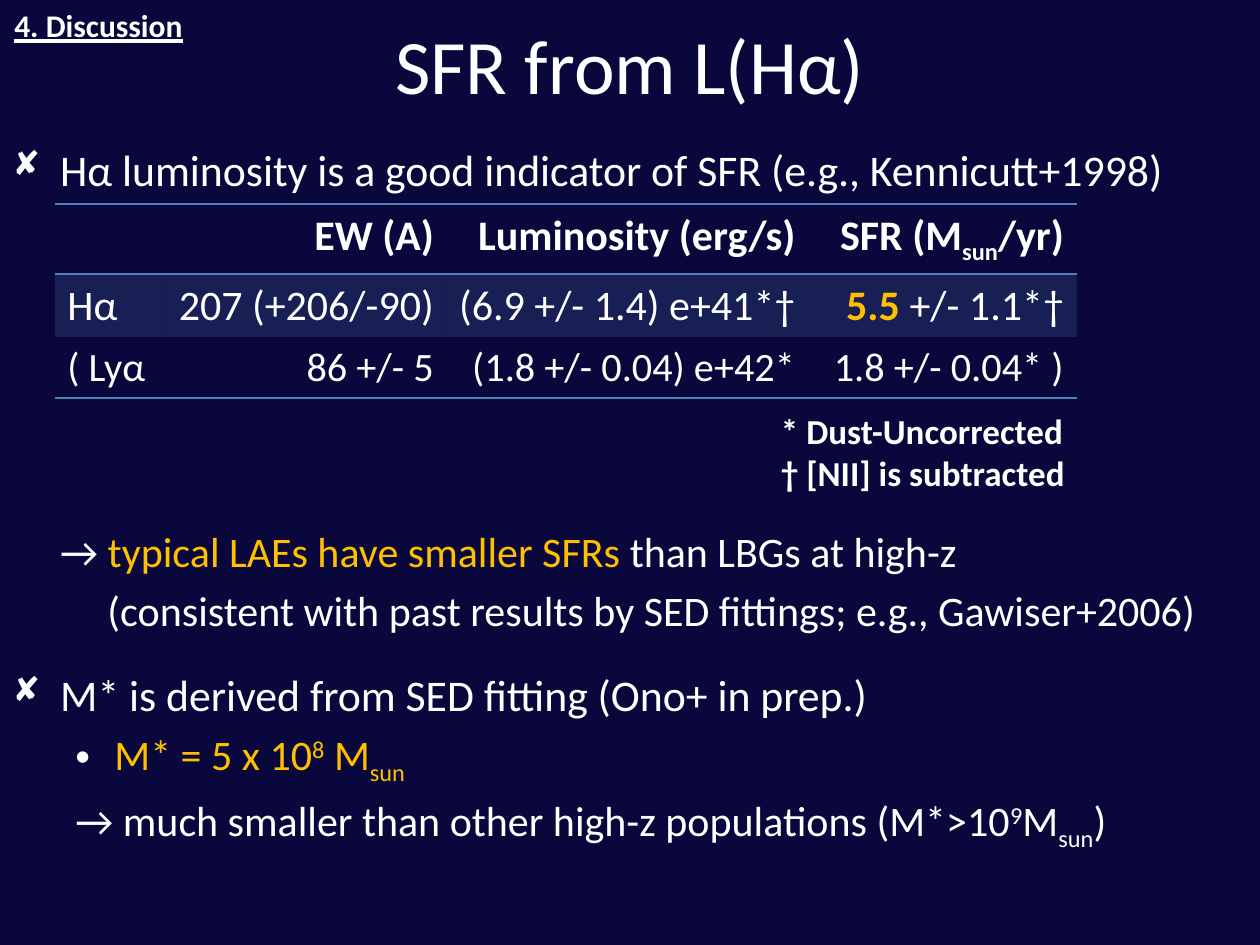
"""Build the slide on star formation rates from H-alpha luminosity."""
from lxml.etree import SubElement
from pptx import Presentation
from pptx.dml.color import RGBColor as Rgb
from pptx.enum.text import MSO_ANCHOR as Anchor, MSO_AUTO_SIZE as Fit, PP_ALIGN as Align
from pptx.oxml.ns import qn
from pptx.util import Inches, Pt

THEME = dict(
    font="Calibri", ground="09073B", ink="FFFFFF", accent="FFC000", rule="4F81BD",
    title=44, lead=25, text=24, last_row=23, note=20, section=18,
)
BULLET_FONTS = {"◻": "Wingdings", "•": "Arial"}
BOLD = dict(bold=True)
GOLD = dict(color=THEME["accent"])
SUB, SUP = dict(baseline=-25000), dict(baseline=30000)


def write(paragraph, runs, size, **common):
    for words, style in runs:
        look = {**common, **style}
        run = paragraph.add_run()
        run.text = words
        run.font.color.rgb = Rgb.from_string(look.pop("color", THEME["ink"]))
        baseline = look.pop("baseline", 0)
        for key, value in dict(name=THEME["font"], size=Pt(size), **look).items():
            setattr(run.font, key, value)
        if baseline:
            run.font._element.set("baseline", str(baseline))


def add_text(slide, place, lines, size, frame_format, align=Align.LEFT, **common):
    frame = slide.shapes.add_textbox(*place).text_frame
    for key, value in frame_format.items():
        setattr(frame, key, value)
    for number, words in enumerate(lines):
        paragraph = frame.add_paragraph() if number else frame.paragraphs[0]
        paragraph.alignment = align
        write(paragraph, [(words, {})] if words else [], size, **common)
    return frame


deck = Presentation()
deck.slide_width, deck.slide_height = Inches(10), Inches(7.5)
col, row = deck.slide_width / 100, deck.slide_height / 75
slide = deck.slides.add_slide(deck.slide_layouts[6])
slide.background.fill.solid()
slide.background.fill.fore_color.rgb = Rgb.from_string(THEME["ground"])

body_lines = [
    ("◻", 3.8, -3.8, 0, "lead",
     [("Hα luminosity is a good indicator of SFR (e.g., Kennicutt+1998)", {})]),
    (None, 3.8, 0, 189, "text",
     [("→ ", {}), ("typical LAEs have smaller SFRs ", GOLD), ("than LBGs at high-z", {})]),
    (None, 7.55, 0, 5, "text",
     [("(consistent with past results by SED fittings; e.g., Gawiser+2006)", {})]),
    ("◻", 3.8, -3.8, 18.5, "lead",
     [("M* is derived from SED fitting (Ono+ in prep.)", {})]),
    ("•", 8.1, -3.1, 5, "text",
     [("M* = 5 x 10", GOLD), ("8", GOLD | SUP), (" M", GOLD), ("sun", GOLD | SUB)]),
    (None, 5, 0, 5, "text",
     [("→ much smaller than other high-z populations (M*>10", {}), ("9", SUP),
      ("M", {}), ("sun", SUB), (")", {})]),
]
body = add_text(slide, (0, int(10.8 * row), int(100 * col), int(64.2 * row)),
                [""] * len(body_lines), THEME["text"], dict(word_wrap=True))
for paragraph, (bullet, margin, indent, gap, size, runs) in zip(body.paragraphs, body_lines):
    paragraph.space_before = Pt(gap)
    properties = paragraph._p.get_or_add_pPr()
    properties.set("marL", str(int(margin * col)))
    properties.set("indent", str(int(indent * col)))
    if bullet:
        bullet_color = SubElement(properties, qn("a:buClr"))
        SubElement(bullet_color, qn("a:srgbClr"), val=THEME["ink"])
        SubElement(properties, qn("a:buFont"), typeface=BULLET_FONTS[bullet])
        SubElement(properties, qn("a:buChar"), char=bullet)
    else:
        SubElement(properties, qn("a:buNone"))
    write(paragraph, runs, THEME[size])

add_text(slide, (int(5 * col), 0, int(90 * col), int(10.1 * row)), ["SFR from L(Hα)"],
         THEME["title"], dict(word_wrap=True, vertical_anchor=Anchor.MIDDLE), Align.CENTER)
label_format = dict(word_wrap=False, auto_size=Fit.SHAPE_TO_FIT_TEXT)
add_text(slide, (int(0.15 * col), 0, int(15.5 * col), int(4 * row)), ["4. Discussion"],
         THEME["section"], label_format, bold=True, underline=True)

results = [
    [[], [("EW (A)", BOLD)], [("Luminosity (erg/s)", BOLD)],
     [("SFR (M", BOLD), ("sun", BOLD | SUB), ("/yr)", BOLD)]],
    [[("Hα", {})], [("207 (+206/-90)", {})], [("(6.9 +/- 1.4) e+41*†", {})],
     [("5.5", GOLD | BOLD), (" +/- 1.1*†", {})]],
    [[("( Lyα", {})], [("86 +/- 5", {})], [("(1.8 +/- 0.04) e+42*", {})],
     [("1.8 +/- 0.04* )", {})]],
]
row_sizes = [THEME["text"], THEME["text"], THEME["last_row"]]
row_rules = [("a:lnT", "a:lnB"), (), ("a:lnB",)]
widths = [8.7, 22.4, 28.7, 21.3]
table = slide.shapes.add_table(
    3, 4, int(4.35 * col), int(16.2 * row), int(sum(widths) * col), int(12.3 * row)).table
table.first_row = table.horz_banding = False
table._tbl.tblPr.find(qn("a:tableStyleId")).text = "{2D5ABB26-0587-4C30-8999-92F81FD0307C}"
for column, width in zip(table.columns, widths):
    column.width = int(width * col)
for r, (entries, size, rules) in enumerate(zip(results, row_sizes, row_rules)):
    table.rows[r].height = int(4.1 * row)
    for c, runs in enumerate(entries):
        cell = table.cell(r, c)
        cell.margin_left = int((0.5 if c else 1) * col)
        paragraph = cell.text_frame.paragraphs[0]
        paragraph.alignment = Align.RIGHT if c else Align.LEFT
        write(paragraph, runs, size)
        cell_format = cell._tc.get_or_add_tcPr()
        for side in rules:
            line = SubElement(cell_format, qn(side), w=str(Pt(1)))
            SubElement(SubElement(line, qn("a:solidFill")), qn("a:srgbClr"), val=THEME["rule"])
        if r == 1:
            cell.fill.solid()
            cell.fill.fore_color.rgb = Rgb.from_string(THEME["rule"])
            tint = cell_format.find(qn("a:solidFill")).find(qn("a:srgbClr"))
            SubElement(tint, qn("a:alpha"), val="20000")
        else:
            cell.fill.background()

add_text(slide, (int(61 * col), int(32 * row), int(25.3 * col), int(7.7 * row)),
         ["* Dust-Uncorrected", "† [NII] is subtracted"], THEME["note"], label_format, bold=True)

deck.save("out.pptx")
